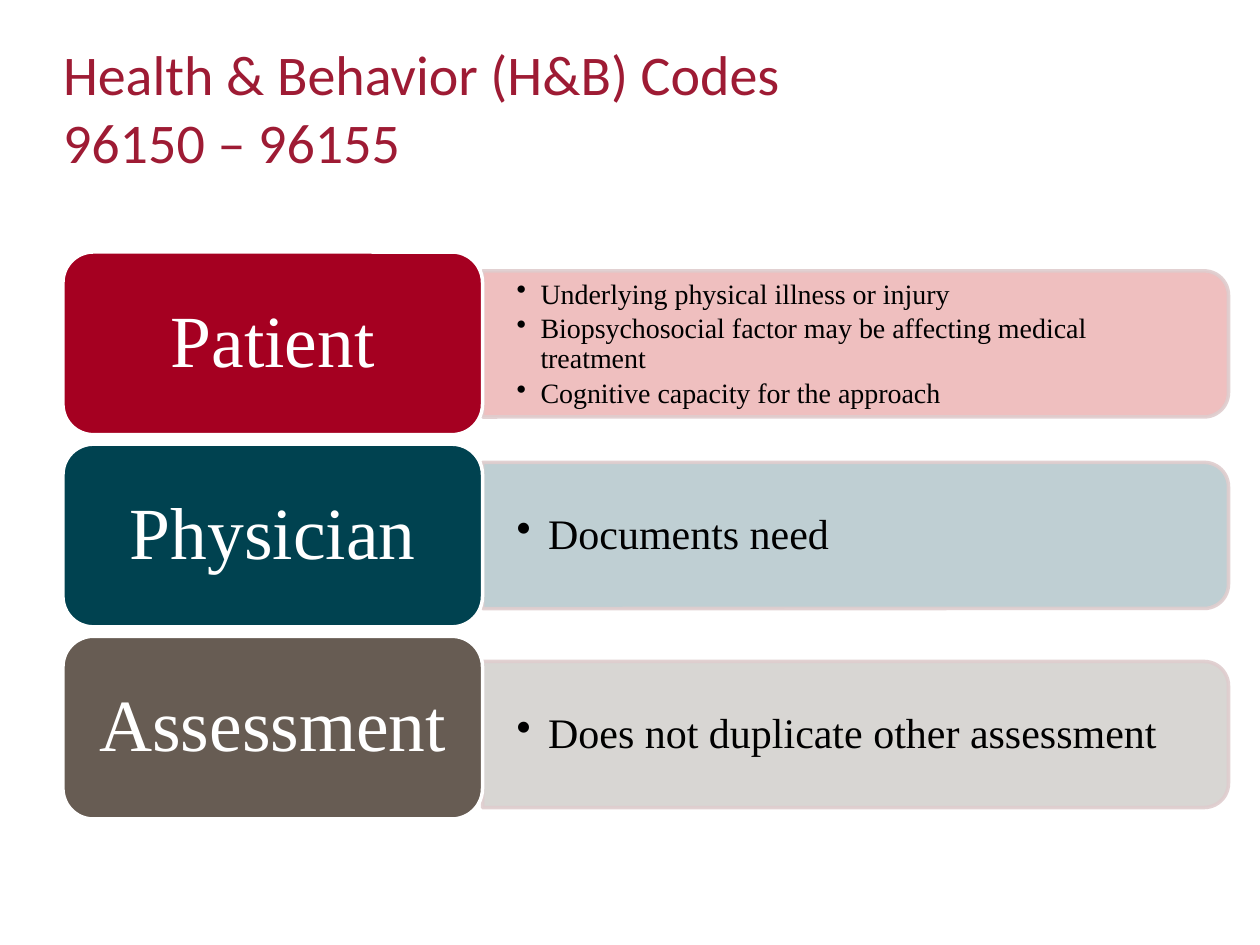
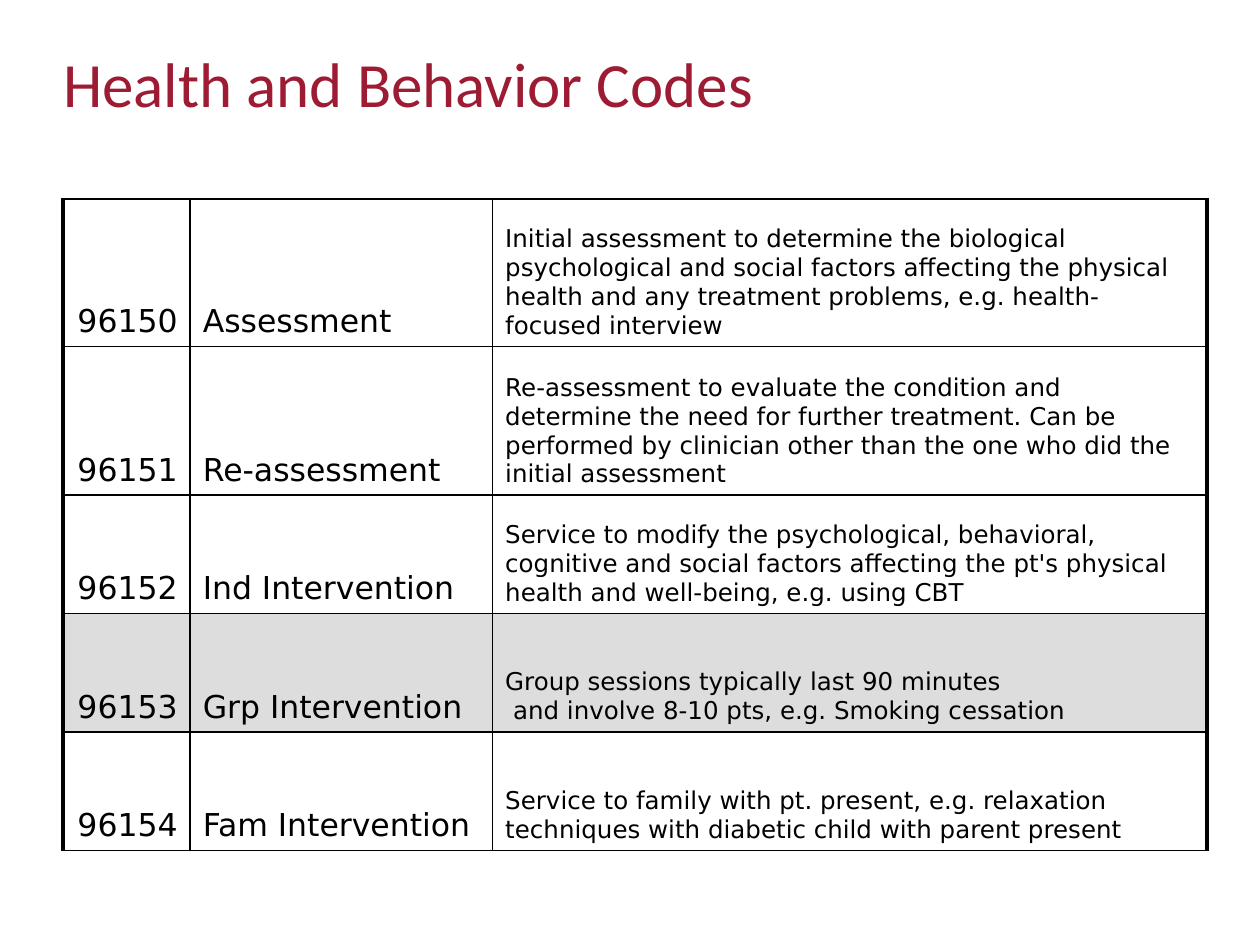
import copy

import pptx
import pptx.dml.color
import pptx.enum.shapes
import pptx.enum.text
import pptx.oxml
import pptx.oxml.ns
import pptx.util

Inches = pptx.util.Inches
Pt = pptx.util.Pt
RGBColor = pptx.dml.color.RGBColor
MSO_SHAPE = pptx.enum.shapes.MSO_SHAPE
PP_ALIGN = pptx.enum.text.PP_ALIGN
MSO_ANCHOR = pptx.enum.text.MSO_ANCHOR
qn = pptx.oxml.ns.qn

TITLE_RED = RGBColor(0x9E, 0x1B, 0x34)
CRIMSON = RGBColor(0xA5, 0x00, 0x21)
RED = RGBColor(0xC0, 0x00, 0x00)
TEAL = RGBColor(0x00, 0x42, 0x50)
BROWN = RGBColor(0x67, 0x5C, 0x53)
BAR_LINE = RGBColor(0xDF, 0xCD, 0xCE)
GREY = RGBColor(0xDD, 0xDD, 0xDD)
WHITE = RGBColor(0xFF, 0xFF, 0xFF)
BLACK = RGBColor(0x00, 0x00, 0x00)

TITLE_FONT = "Calibri"
DIAGRAM_FONT = "Times New Roman"
TABLE_FONT = "DejaVu Sans"

# label, label colour, bar colour, bar top, text size, bullet indent, points
TOPICS = [
    ("Patient", CRIMSON, RED, 2.15, 16, 0.19,
     ["Underlying physical illness or injury",
      "Biopsychosocial factor may be affecting medical treatment",
      "Cognitive capacity for the approach"]),
    ("Physician", TEAL, TEAL, 3.67, 24, 0.25, ["Documents need"]),
    ("Assessment", BROWN, BROWN, 5.25, 24, 0.25,
     ["Does not duplicate other assessment"]),
]

CODES = [
    ("96150", "Assessment",
     "Initial assessment to determine the biological\npsychological and social "
     "factors affecting the physical health and any treatment problems, e.g. "
     "health-focused interview"),
    ("96151", "Re-assessment",
     "Re-assessment to evaluate the condition and determine the need for "
     "further treatment. Can be performed by clinician other than the one who "
     "did the initial assessment"),
    ("96152", "Ind Intervention",
     "Service to modify the psychological, behavioral, cognitive and social "
     "factors affecting the pt's physical health and well-being, e.g. using CBT"),
    ("96153", "Grp Intervention",
     "Group sessions typically last 90 minutes\n and involve 8-10 pts, e.g. "
     "Smoking cessation"),
    ("96154", "Fam Intervention",
     "Service to family with pt. present, e.g. relaxation\ntechniques with "
     "diabetic child with parent present"),
]
SHADED_CODE = "96153"
COLUMN_WIDTHS = [1.01, 2.4, 5.67]
ROW_HEIGHTS = [1.17, 1.18, 0.94, 0.94, 0.94]


def write(p, text, font, size, color=BLACK, align=PP_ALIGN.LEFT,
          spacing=None, after=None, bullet_indent=None):
    """Fill a paragraph; a newline in the text becomes a line break."""
    p.text = text.replace("\n", "\v")
    p.alignment = align
    if spacing:
        p.line_spacing = spacing
    if after:
        p.space_after = Pt(after)
    if bullet_indent:
        pPr = p._p.get_or_add_pPr()
        pPr.set("marL", str(Inches(bullet_indent)))
        pPr.set("indent", str(-Inches(bullet_indent)))
        bullet = pptx.oxml.ns.qn("a:buChar")
        pPr.append(pPr.makeelement(bullet, {"char": "•"}))
    for r in p.runs:
        r.font.name = font
        r.font.size = Pt(size)
        r.font.color.rgb = color
    for br in p._p.findall(qn("a:br")):
        br.insert(0, copy.deepcopy(p.runs[0]._r.rPr))


def set_frame(tf, side, end):
    tf.word_wrap = True
    tf.auto_size = pptx.enum.text.MSO_AUTO_SIZE.NONE
    tf.vertical_anchor = MSO_ANCHOR.MIDDLE
    tf.margin_left = tf.margin_right = Inches(side)
    tf.margin_top = tf.margin_bottom = Inches(end)


def add_titled_slide(prs, text, size, top):
    slide = prs.slides.add_slide(prs.slide_layouts[5])
    title = slide.shapes.title
    title.left, title.top = Inches(0.5), Inches(top)
    title.width, title.height = Inches(9), Inches(0.8)
    set_frame(title.text_frame, 0, 0)
    write(title.text_frame.paragraphs[0], text, TITLE_FONT, size, TITLE_RED)
    return slide


def add_box(slide, kind, left, top, width, height, fill, line):
    sp = slide.shapes.add_shape(kind, Inches(left), Inches(top),
                                Inches(width), Inches(height))
    sp.shadow.inherit = False
    sp.fill.solid()
    sp.fill.fore_color.rgb = fill
    sp.line.color.rgb = line
    sp.line.width = Pt(2)
    return sp


def set_opacity(color_parent, percent):
    color = color_parent.find(qn("a:solidFill"))[0]
    color.append(color.makeelement(qn("a:alpha"), {"val": str(percent * 1000)}))


def add_bar(slide, top, color, points, size, indent):
    """Tinted bar, rounded on the right, with a bulleted list over it."""
    left, length, height = 3.83, 5.92, 1.16
    shift = (length - height) / 2
    bar = add_box(slide, MSO_SHAPE.ROUND_2_SAME_RECTANGLE, left + shift,
                  top - shift, height, length, color, BAR_LINE)
    bar.rotation = 90
    spPr = bar._element.spPr
    set_opacity(spPr, 25)
    set_opacity(spPr.find(qn("a:ln")), 90)

    box = slide.shapes.add_textbox(Inches(left), Inches(top + 0.06),
                                   Inches(5.86), Inches(1.05))
    tf = box.text_frame
    set_frame(tf, 0.27, 0.14)
    for i, point in enumerate(points):
        p = tf.add_paragraph() if i else tf.paragraphs[0]
        write(p, point, DIAGRAM_FONT, size, spacing=0.9, after=size * 0.15,
              bullet_indent=indent)


def add_label(slide, top, text, color):
    sp = add_box(slide, MSO_SHAPE.ROUNDED_RECTANGLE, 0.5, top, 3.33, 1.45,
                 color, WHITE)
    set_frame(sp.text_frame, 0.17, 0.09)
    write(sp.text_frame.paragraphs[0], text, DIAGRAM_FONT, 42, WHITE,
          PP_ALIGN.CENTER, spacing=0.9)


def set_borders(cell, **widths):
    """Draw black cell borders; widths in points, keyed L, R, T and B."""
    tcPr = cell._tc.get_or_add_tcPr()
    for side, width in widths.items():
        tcPr.append(pptx.oxml.parse_xml(
            f'<a:ln{side} {pptx.oxml.ns.nsdecls("a")} w="{Pt(width)}">'
            f'<a:solidFill><a:srgbClr val="{BLACK}"/></a:solidFill>'
            f'</a:ln{side}>'))


def add_code_table(slide):
    table = slide.shapes.add_table(
        len(CODES), len(COLUMN_WIDTHS), Inches(0.5), Inches(1.58),
        Inches(sum(COLUMN_WIDTHS)), Inches(sum(ROW_HEIGHTS))).table
    table.first_row = table.horz_banding = False
    for column, width in zip(table.columns, COLUMN_WIDTHS):
        column.width = Inches(width)
    last = len(COLUMN_WIDTHS) - 1
    for r, (row, height) in enumerate(zip(CODES, ROW_HEIGHTS)):
        table.rows[r].height = Inches(height)
        for c, text in enumerate(row):
            cell = table.cell(r, c)
            set_borders(cell, L=2 if c == 0 else 1, R=2 if c == last else 1,
                        T=1, B=1)
            cell.fill.solid()
            cell.fill.fore_color.rgb = GREY if row[0] == SHADED_CODE else WHITE
            cell.vertical_anchor = MSO_ANCHOR.BOTTOM
            write(cell.text_frame.paragraphs[0], text, TABLE_FONT,
                  14 if c == last else 18,
                  align=PP_ALIGN.RIGHT if c == 0 else PP_ALIGN.LEFT)


def main():
    prs = pptx.Presentation()
    prs.slide_width, prs.slide_height = Inches(10), Inches(7.5)

    slide = add_titled_slide(
        prs, "Health & Behavior (H&B) Codes\n96150 – 96155", 32, 0.45)
    for i, (label, color, tint, top, size, indent, points) in enumerate(TOPICS):
        add_bar(slide, top, tint, points, size, indent)
        add_label(slide, 2 + i * 1.525, label, color)

    slide = add_titled_slide(prs, "Health and Behavior Codes", 36, 0.25)
    add_code_table(slide)

    prs.save("out.pptx")


if __name__ == "__main__":
    main()
